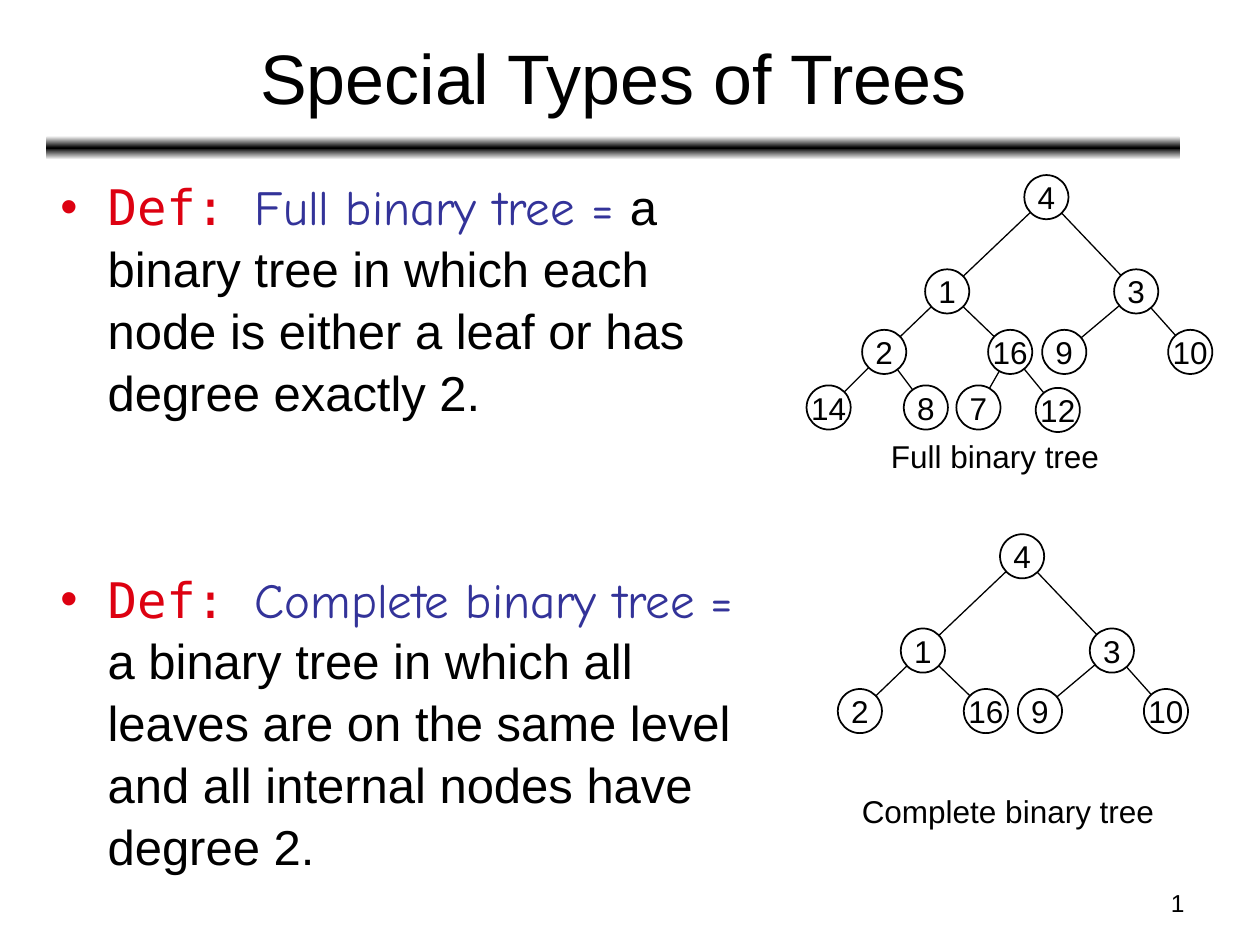
from copy import deepcopy

from lxml import etree
from pptx import Presentation
from pptx.dml.color import RGBColor
from pptx.enum.shapes import MSO_CONNECTOR, MSO_SHAPE
from pptx.enum.text import MSO_ANCHOR, PP_ALIGN
from pptx.oxml.ns import qn
from pptx.util import Cm, Pt

STRAIGHT = MSO_CONNECTOR.STRAIGHT
ELLIPSE, ROUNDED = MSO_SHAPE.OVAL, MSO_SHAPE.ROUNDED_RECTANGLE
MIDDLE, TOP = MSO_ANCHOR.MIDDLE, MSO_ANCHOR.TOP
LEFT, CENTER, RIGHT = PP_ALIGN.LEFT, PP_ALIGN.CENTER, PP_ALIGN.RIGHT

BLACK = RGBColor(0x00, 0x00, 0x00)
WHITE = RGBColor(0xFF, 0xFF, 0xFF)
RED = RGBColor(0xDD, 0x01, 0x11)
INDIGO = RGBColor(0x33, 0x33, 0x99)

NODE_SIZE = 0.89
# value: (left, top, parent value), in cm within the tree's box
COMPLETE_NODES = {
    "4": (4.39, 0, None),
    "1": (2.39, 1.9, "4"),
    "3": (6.2, 1.9, "4"),
    "2": (1.12, 3.12, "1"),
    "16": (3.66, 3.12, "1"),
    "9": (4.75, 3.12, "3"),
    "10": (7.29, 3.12, "3"),
}
FULL_NODES = COMPLETE_NODES | {
    "14": (0, 4.24, "2"),
    "8": (1.96, 4.24, "2"),
    "7": (3.02, 4.24, "16"),
    "12": (4.62, 4.29, "16"),
}
DEFINITIONS = [
    ("Full binary tree = ",
     "a binary tree in which each node is either a leaf or has degree exactly 2."),
    ("Complete binary tree = ",
     "a binary tree in which all leaves are on the same level "
     "and all internal nodes have degree 2."),
]


def add_text(paragraph, text, size=18, font="Arial", color=BLACK, align=LEFT):
    paragraph.alignment = align
    run = paragraph.add_run()
    run.text = text
    run.font.size = Pt(size)
    run.font.name = font
    run.font.color.rgb = color


def add_box(slide, left, top, width, height, wrap=True, anchor=TOP):
    box = slide.shapes.add_textbox(Cm(left), Cm(top), Cm(width), Cm(height))
    frame = box.text_frame
    frame.word_wrap = wrap
    frame.vertical_anchor = anchor
    return frame


def add_header(slide, left, top, width):
    title = add_box(slide, left, top, width, 2.51, anchor=MIDDLE)
    add_text(title.paragraphs[0], "Special Types of Trees", size=40, align=CENTER)

    rule = slide.shapes.add_shape(
        ROUNDED, Cm(left), Cm(top + 2.46), Cm(width), Cm(0.48))
    rule.shadow.inherit = False
    rule.line.fill.background()
    rule.fill.gradient()
    rule.fill.gradient_angle = 90
    edge, middle = rule.fill.gradient_stops
    edge.color.rgb, edge.position = WHITE, 0
    middle.color.rgb, middle.position = BLACK, 0.5
    stops = next(rule.element.iter(qn("a:gsLst")))
    far_edge = deepcopy(stops[0])
    far_edge.set("pos", "100000")
    stops.append(far_edge)


def add_bullet(paragraph, indent):
    properties = paragraph._p.get_or_add_pPr()
    properties.set("marL", str(indent))
    properties.set("indent", str(-indent))
    etree.SubElement(properties, qn("a:buFont"), typeface="Arial")
    etree.SubElement(properties, qn("a:buChar"), char="•")


def add_definitions(slide, left, top, width, height):
    frame = add_box(slide, left, top, width, height)
    for index, (term, meaning) in enumerate(DEFINITIONS):
        paragraph = frame.add_paragraph() if index else frame.paragraphs[0]
        add_bullet(paragraph, Cm(0.95))
        paragraph.line_spacing = 1.05
        if index:
            paragraph.space_before = Pt(83)
        add_text(paragraph, "Def: ", size=28, font="DejaVu Sans Mono", color=RED)
        add_text(paragraph, term, size=28, font="Comic Neue", color=INDIGO)
        add_text(paragraph, meaning, size=28)


def add_edge(slide, start, end):
    edge = slide.shapes.add_connector(STRAIGHT, *map(Cm, (*start, *end)))
    edge.line.color.rgb = BLACK
    edge.line.width = Pt(0.75)
    etree.SubElement(edge.element.spPr, qn("a:effectLst"))


def add_node(slide, left, top, value):
    node = slide.shapes.add_shape(
        ELLIPSE, Cm(left), Cm(top), Cm(NODE_SIZE), Cm(NODE_SIZE))
    node.shadow.inherit = False
    node.fill.solid()
    node.fill.fore_color.rgb = WHITE
    node.line.color.rgb = BLACK
    node.line.width = Pt(1)
    node.text_frame.word_wrap = False
    node.text_frame.vertical_anchor = MIDDLE
    add_text(node.text_frame.paragraphs[0], value, align=CENTER)


def add_tree(slide, left, top, nodes, caption, caption_box):
    """Draw edges between node centres, then the nodes over them."""
    def center(value):
        x, y, _ = nodes[value]
        return left + x + NODE_SIZE / 2, top + y + NODE_SIZE / 2

    for value, (_, _, parent) in nodes.items():
        if parent:
            add_edge(slide, center(parent), center(value))
    for value, (x, y, _) in nodes.items():
        add_node(slide, left + x, top + y, value)

    x, y, width = caption_box
    label = add_box(slide, left + x, top + y, width, 1.02, wrap=False)
    add_text(label.paragraphs[0], caption, align=CENTER)


def add_page_number(slide, left, top, width, height):
    frame = add_box(slide, left, top, width, height)
    add_text(frame.paragraphs[0], "1", size=14, align=RIGHT)


def main():
    deck = Presentation()
    deck.slide_width, deck.slide_height = Cm(25.4), Cm(19.05)
    slide = deck.slides.add_slide(deck.slide_layouts[6])
    add_header(slide, 0.92, 0.28, 22.88)
    add_definitions(slide, 0.97, 3.38, 14.73, 14.3)
    add_tree(slide, 16.26, 3.53, FULL_NODES, "Full binary tree", (1.45, 5.16, 4.7))
    add_tree(slide, 15.77, 10.77, COMPLETE_NODES, "Complete binary tree",
             (1.35, 5.08, 6.4))
    add_page_number(slide, 18.21, 17.78, 5.92, 0.89)
    deck.save("out.pptx")


if __name__ == "__main__":
    main()
